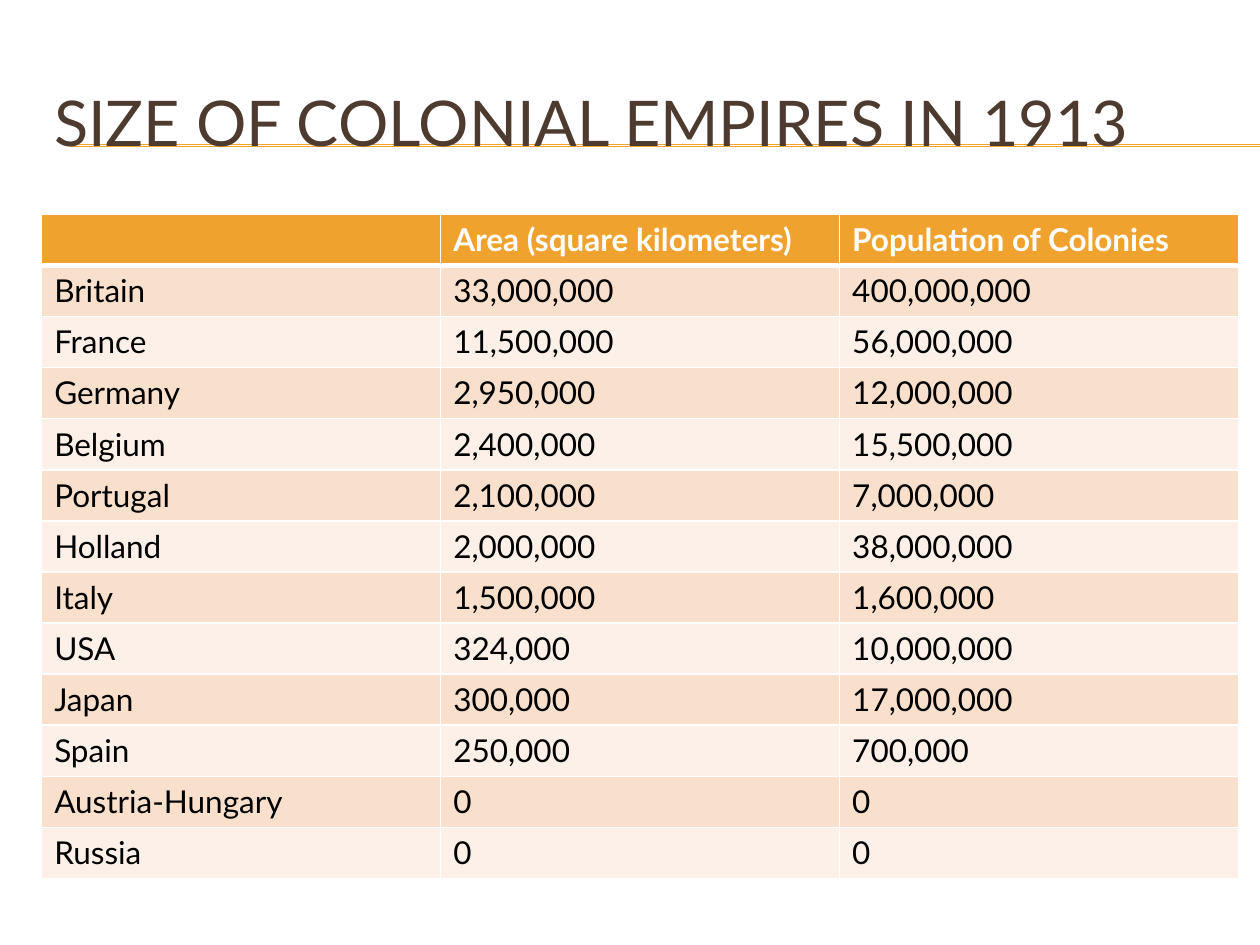
from dataclasses import dataclass

from lxml.etree import SubElement
from pptx import Presentation
from pptx.dml.color import RGBColor as Color
from pptx.enum.shapes import MSO_CONNECTOR as Connector
from pptx.enum.text import MSO_ANCHOR as Anchor
from pptx.oxml.ns import qn
from pptx.util import Cm, Pt


@dataclass(frozen=True)
class Theme:
    font: str = "Lato"
    title_size: float = 36
    table_size: float = 18
    accent: str = "F0A22E"
    title: str = "4E3B30"
    text: str = "000000"
    white: str = "FFFFFF"
    bands: tuple = ("F9E0CD", "FCF0E8")
    rule_width: float = 0.75
    border_width: float = 1
    header_border_width: float = 3


THEME = Theme()
TITLE = "SIZE OF COLONIAL EMPIRES IN 1913"
HEADER = ("", "Area (square kilometers)", "Population of Colonies")
EMPIRES = [
    ("Britain", "33,000,000", "400,000,000"),
    ("France", "11,500,000", "56,000,000"),
    ("Germany", "2,950,000", "12,000,000"),
    ("Belgium", "2,400,000", "15,500,000"),
    ("Portugal", "2,100,000", "7,000,000"),
    ("Holland", "2,000,000", "38,000,000"),
    ("Italy", "1,500,000", "1,600,000"),
    ("USA", "324,000", "10,000,000"),
    ("Japan", "300,000", "17,000,000"),
    ("Spain", "250,000", "700,000"),
    ("Austria-Hungary", "0", "0"),
    ("Russia", "0", "0"),
]
SLIDE_WIDTH = 25.4
LEFT, CONTENT_WIDTH = 0.84, 24.13
ROW_HEIGHT = 1.03


def set_attributes(target, values):
    for name, value in values.items():
        setattr(target, name, value)


def write_text(paragraph, text, size, color, bold=False):
    run = paragraph.add_run()
    run.text = text
    set_attributes(run.font, {"name": THEME.font, "size": Pt(size), "bold": bold})
    run.font.color.rgb = Color.from_string(color)


def add_rule(slide, top):
    rule = slide.shapes.add_connector(
        Connector.STRAIGHT, Cm(1.42), Cm(top), Cm(SLIDE_WIDTH), Cm(top)
    )
    rule.line.width = Pt(THEME.rule_width)
    rule.line.color.rgb = Color.from_string(THEME.accent)
    SubElement(rule.element.spPr, qn("a:effectLst"))


def add_title(slide, text):
    box = slide.shapes.add_textbox(Cm(LEFT), Cm(1.27), Cm(CONTENT_WIDTH), Cm(2.34))
    frame = box.text_frame
    set_attributes(frame, {"word_wrap": True, "vertical_anchor": Anchor.MIDDLE})
    write_text(frame.paragraphs[0], text, THEME.title_size, THEME.title)


def set_borders(cell, widths):
    properties = cell._tc.get_or_add_tcPr()
    for side, width in widths.items():
        border = SubElement(properties, qn(f"a:ln{side}"), w=str(Pt(width)))
        fill = SubElement(border, qn("a:solidFill"))
        SubElement(fill, qn("a:srgbClr"), val=THEME.white)


def format_cell(cell, text, row_index):
    is_header = row_index == 0
    widths = dict.fromkeys("LRTB", THEME.border_width)
    if is_header:
        widths["B"] = THEME.header_border_width
    elif row_index == 1:
        widths["T"] = THEME.header_border_width
    set_borders(cell, widths)
    fill_color = THEME.accent if is_header else THEME.bands[(row_index - 1) % 2]
    cell.fill.solid()
    cell.fill.fore_color.rgb = Color.from_string(fill_color)
    if text:
        text_color = THEME.white if is_header else THEME.text
        paragraph = cell.text_frame.paragraphs[0]
        write_text(paragraph, text, THEME.table_size, text_color, is_header)


def add_empire_table(slide, rows):
    table = slide.shapes.add_table(
        len(rows), len(HEADER), Cm(LEFT), Cm(4.32),
        Cm(CONTENT_WIDTH), Cm(ROW_HEIGHT * len(rows)),
    ).table
    for row_index, values in enumerate(rows):
        table.rows[row_index].height = Cm(ROW_HEIGHT)
        for column_index, text in enumerate(values):
            format_cell(table.cell(row_index, column_index), text, row_index)


def main():
    presentation = Presentation()
    size = {"slide_width": Cm(SLIDE_WIDTH), "slide_height": Cm(19.05)}
    set_attributes(presentation, size)
    slide = presentation.slides.add_slide(presentation.slide_layouts[6])
    for top in (2.92, 2.95):
        add_rule(slide, top)
    add_title(slide, TITLE)
    add_empire_table(slide, [HEADER, *EMPIRES])
    presentation.save("out.pptx")


if __name__ == "__main__":
    main()
